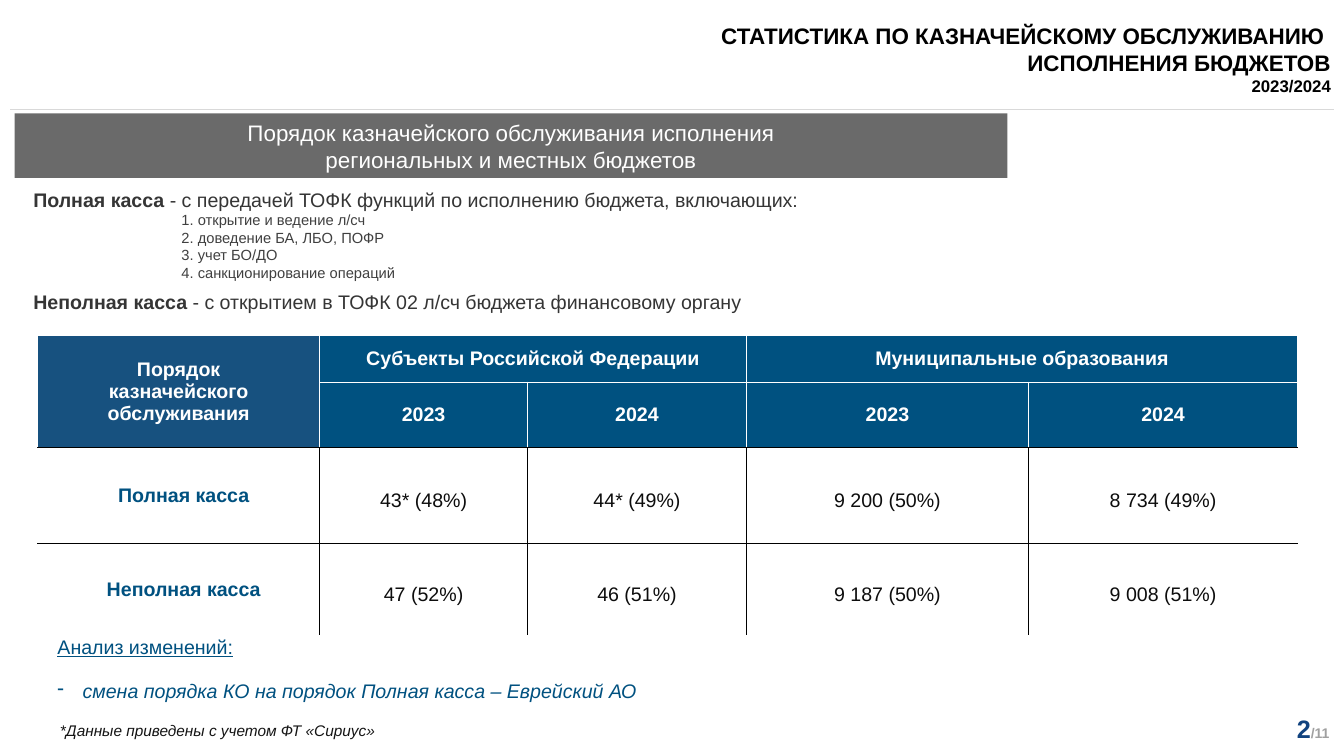
from lxml import etree
from pptx import Presentation, util as u
from pptx.dml.color import RGBColor
from pptx.enum import shapes, text
from pptx.oxml.ns import qn

SLIDE_WIDTH, SLIDE_HEIGHT = u.Inches(26.67), u.Inches(15)
COLORS = {
    "black": "000000", "white": "FFFFFF", "rule": "D9D9D9", "banner": "6A6A6A",
    "header": "005180", "corner": "17517F", "term": "353535", "step": "404040",
    "value": "0D0D0D", "note": "151515", "page": "11437F", "total": "A0A0A0",
}
LEFT, CENTER, RIGHT = text.PP_ALIGN.LEFT, text.PP_ALIGN.CENTER, text.PP_ALIGN.RIGHT
COLUMNS = [20.96, 15.49, 16.27, 21, 20.02]
ROWS = [6.2, 5.8, 12.67, 12.2]
HEADER_ROWS = 2
YEARS = ["2023", "2024"]
TABLE = [
    ["", "Субъекты Российской Федерации", "", "Муниципальные образования", ""],
    ["", *YEARS, *YEARS],
    ["Полная касса", "43* (48%)", "44* (49%)", "9 200 (50%)", "8 734 (49%)"],
    ["Неполная касса", "47 (52%)", "46 (51%)", "9 187 (50%)", "9 008 (51%)"],
]
STEPS = [
    "1. открытие и ведение л/сч",
    "2. доведение БА, ЛБО, ПОФР",
    "3. учет БО/ДО",
    "4. санкционирование операций",
]


def across(percent):
    return round(SLIDE_WIDTH * percent / 100)


def down(percent):
    return round(SLIDE_HEIGHT * percent / 100)


def place(left, top, width, height):
    return across(left), down(top), across(width), down(height)


def rgb(name):
    return RGBColor.from_string(COLORS[name])


def add_run(paragraph, words, size, color, bold=False, italic=False, underline=False):
    run = paragraph.add_run()
    run.text = words
    font = run.font
    font.name, font.size, font.color.rgb = "Arial", u.Pt(size), rgb(color)
    font.bold, font.italic, font.underline = bold, italic, underline


def next_paragraph(frame, align=LEFT):
    first = frame.paragraphs[0]
    paragraph = frame.add_paragraph() if first.runs else first
    paragraph.alignment = align
    return paragraph


def indent(paragraph, margin, first_line):
    properties = paragraph._p.get_or_add_pPr()
    properties.set("marL", str(u.Inches(margin)))
    properties.set("indent", str(u.Inches(first_line)))
    return properties


def set_insets(target, horizontal, vertical):
    target.margin_left = target.margin_right = u.Inches(horizontal)
    target.margin_top = target.margin_bottom = u.Inches(vertical)


def add_text(slide, box, insets=(0.37, 0.19)):
    frame = slide.shapes.add_textbox(*place(*box)).text_frame
    frame.word_wrap = True
    frame.auto_size = text.MSO_AUTO_SIZE.SHAPE_TO_FIT_TEXT
    set_insets(frame, *insets)
    return frame


def add_title(slide):
    title = slide.shapes.title
    title.left, title.top, title.width, title.height = place(-0.15, 1.53, 99.18, 12.6)
    frame = title.text_frame
    frame.word_wrap = True
    frame.auto_size = text.MSO_AUTO_SIZE.NONE
    frame.vertical_anchor = text.MSO_ANCHOR.MIDDLE
    set_insets(frame, 0, 0)
    heading = next_paragraph(frame, RIGHT)
    for line in ("СТАТИСТИКА ПО КАЗНАЧЕЙСКОМУ ОБСЛУЖИВАНИЮ ", "ИСПОЛНЕНИЯ БЮДЖЕТОВ"):
        add_run(heading, line, 32, "black", bold=True)
        heading.add_line_break()
    add_run(heading, "2023/2024", 24, "black", bold=True)


def add_rule(slide):
    rule = slide.shapes.add_connector(
        shapes.MSO_CONNECTOR.STRAIGHT,
        across(0.75), down(14.47), across(99.25), down(14.47))
    rule.line.color.rgb, rule.line.width = rgb("rule"), u.Pt(1)
    etree.SubElement(rule._element.spPr, qn("a:effectLst"))


def add_banner(slide):
    banner = slide.shapes.add_shape(
        shapes.MSO_SHAPE.RECTANGLE, *place(1.09, 15, 73.87, 8.53))
    banner.shadow.inherit = False
    banner.fill.solid()
    banner.fill.fore_color.rgb = rgb("banner")
    banner.line.fill.background()
    banner.text_frame.vertical_anchor = text.MSO_ANCHOR.MIDDLE
    for line in ("Порядок казначейского обслуживания исполнения",
                 "региональных и местных бюджетов"):
        add_run(next_paragraph(banner.text_frame, CENTER), line, 32, "white")


def add_definition(slide, box, term, meaning, steps=()):
    frame = add_text(slide, box)
    definition = next_paragraph(frame)
    add_run(definition, term, 28, "term", bold=True)
    add_run(definition, meaning, 28, "term")
    for step in steps:
        item = next_paragraph(frame)
        indent(item, 0, 2.94)
        add_run(item, step, 21, "step")


def set_borders(cell, sides):
    properties = cell._tc.get_or_add_tcPr()
    for position, (side, color) in enumerate(sides.items()):
        border = etree.Element(qn("a:ln" + side), w=str(u.Pt(1)))
        fill = etree.SubElement(border, qn("a:solidFill"))
        etree.SubElement(fill, qn("a:srgbClr"), val=COLORS[color])
        properties.insert(position, border)


def style_cell(cell, row, column):
    header = row < HEADER_ROWS
    last_column = column + cell.span_width == len(COLUMNS)
    last_row = row + cell.span_height == len(ROWS)
    header_bottom = row + cell.span_height < HEADER_ROWS
    cell.vertical_anchor = text.MSO_ANCHOR.MIDDLE
    if header:
        set_insets(cell, 0.01, 0)
        cell.fill.solid()
        cell.fill.fore_color.rgb = rgb("header" if column else "corner")
    else:
        set_insets(cell, 0.13, 0.06)
        cell.fill.background()
    set_borders(cell, {
        "L": "white" if header or column == 0 else "black",
        "R": "white" if header or last_column else "black",
        "T": "white" if header else "black",
        "B": "white" if header_bottom or last_row else "black",
    })


def fill_cell(cell, words, row, column):
    paragraph = next_paragraph(cell.text_frame, CENTER)
    if row < HEADER_ROWS:
        add_run(paragraph, words, 28, "white", bold=True)
    elif column == 0:
        indent(paragraph, 0.2, 0)
        add_run(paragraph, words, 28, "header", bold=True)
    else:
        paragraph.line_spacing = 1.5
        add_run(paragraph, words, 28, "value")


def add_statistics(slide):
    table = slide.shapes.add_table(
        len(ROWS), len(COLUMNS), *place(2.81, 44.33, sum(COLUMNS), sum(ROWS))).table
    table.first_row = table.horz_banding = False
    for column, width in zip(table.columns, COLUMNS):
        column.width = across(width)
    for row, height in zip(table.rows, ROWS):
        row.height = down(height)
    table.cell(0, 0).merge(table.cell(1, 0))
    for start in (1, 3):
        table.cell(0, start).merge(table.cell(0, start + 1))
    for line in ("Порядок", "казначейского обслуживания"):
        fill_cell(table.cell(0, 0), line, 0, 0)
    for row, entries in enumerate(TABLE):
        for column, words in enumerate(entries):
            cell = table.cell(row, column)
            if cell.is_spanned:
                continue
            style_cell(cell, row, column)
            if words:
                fill_cell(cell, words, row, column)


def add_analysis(slide):
    frame = add_text(slide, (2.89, 82.67, 97, 11.6))
    add_run(next_paragraph(frame), "Анализ изменений:", 28, "header", underline=True)
    change = next_paragraph(frame)
    etree.SubElement(indent(change, 0.5, -0.5), qn("a:buChar"), char="-")
    change.line_spacing, change.space_before = 1.5, u.Pt(13)
    add_run(change, "смена порядка КО на порядок Полная касса – Еврейский АО",
            28, "header", italic=True)


def add_footer(slide):
    footnote = next_paragraph(add_text(slide, (2.89, 94.2, 84.29, 5), (0.42, 0.19)))
    add_run(footnote, "*Данные приведены с учетом ФТ «Сириус»", 22, "note", italic=True)
    page = next_paragraph(add_text(slide, (92.2, 94, 7.09, 4.73), (0.1, 0.05)), RIGHT)
    add_run(page, "2", 36, "page", bold=True)
    add_run(page, "/11", 20, "total", bold=True)


def main():
    deck = Presentation()
    deck.slide_width, deck.slide_height = SLIDE_WIDTH, SLIDE_HEIGHT
    slide = deck.slides.add_slide(deck.slide_layouts.get_by_name("Title Only"))
    add_rule(slide)
    add_title(slide)
    add_statistics(slide)
    add_definition(slide, (1.09, 23.53, 97.94, 15.07), "Полная касса ",
                   "- с передачей ТОФК функций по исполнению бюджета, включающих:", STEPS)
    add_definition(slide, (1.09, 37.13, 95.5, 5.67), "Неполная касса ",
                   "- с открытием в ТОФК 02 л/сч бюджета финансовому органу")
    add_banner(slide)
    add_analysis(slide)
    add_footer(slide)
    deck.save("out.pptx")


if __name__ == "__main__":
    main()
